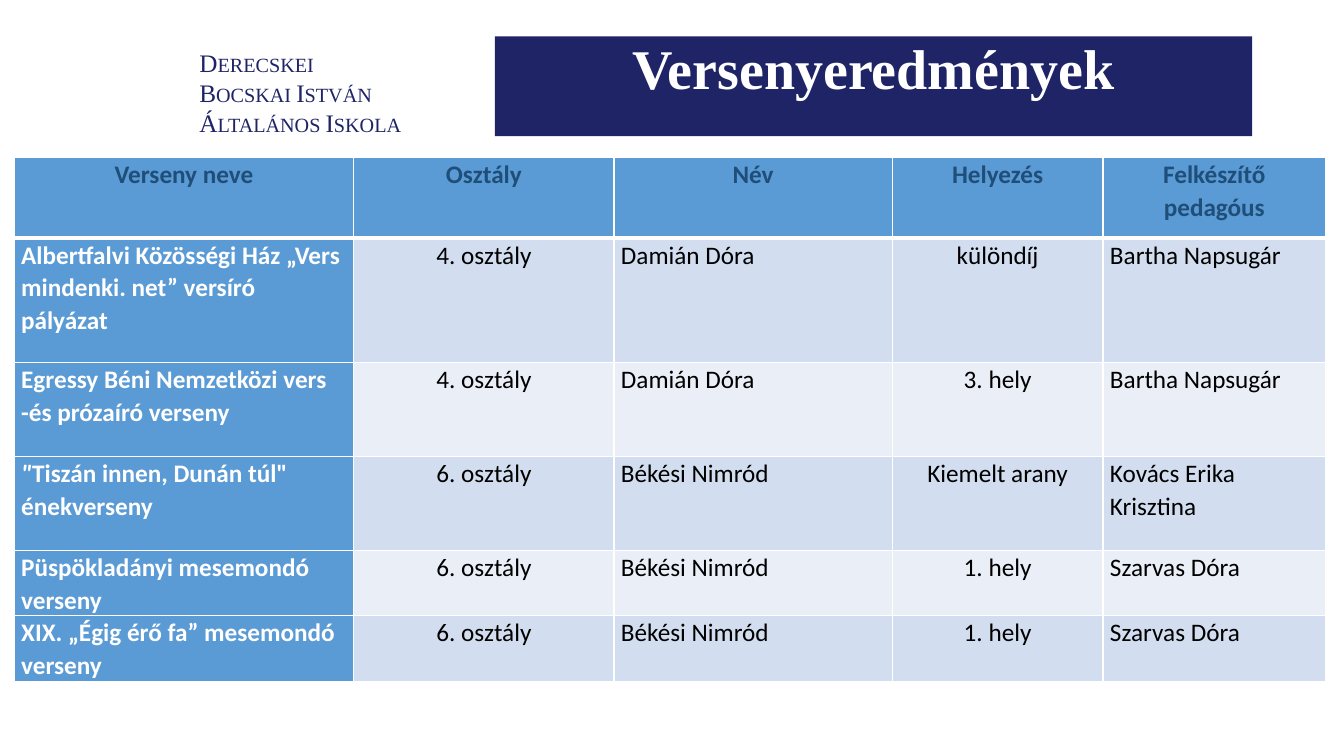
from dataclasses import dataclass

from lxml import etree
from pptx import Presentation, util as u
from pptx.dml.color import RGBColor
from pptx.enum import shapes, text
from pptx.oxml.ns import qn

SLIDE_WIDTH = u.Inches(13.33)
SLIDE_HEIGHT = u.Inches(7.5)


@dataclass(frozen=True)
class Theme:
    navy: str = "1F2466"
    white: str = "FFFFFF"
    black: str = "000000"
    header_ink: str = "1F4E79"
    accent: str = "5B9BD5"
    bands: tuple[str, str] = ("D2DEEF", "EAEFF7")
    heading_font: str = "Times New Roman"
    table_font: str = "Calibri"
    title_size: int = 40
    body_size: int = 18
    rule: int = 1
    header_rule: int = 3


@dataclass(frozen=True)
class Area:
    """Left, top, width and height as percentages of the slide."""
    left: float
    top: float
    width: float
    height: float

    def lengths(self) -> tuple[int, int, int, int]:
        return across(self.left), down(self.top), across(self.width), down(self.height)


@dataclass(frozen=True)
class Column:
    heading: str
    share: float
    centred: bool


@dataclass(frozen=True)
class Result:
    share: float
    contest: str
    grade: str
    pupil: str
    place: str
    teacher: str
    italic_lead: str = ""

    def values(self) -> tuple[str, ...]:
        return self.contest, self.grade, self.pupil, self.place, self.teacher


@dataclass(frozen=True)
class Ink:
    font: str
    size: int
    colour: str
    bold: bool = False


THEME = Theme()
SCHOOL_AREA = Area(14.1, 5.6, 50.04, 17.47)
TITLE_AREA = Area(36.83, 4.8, 56.34, 13.2)
TABLE_LEFT, TABLE_TOP = 1.05, 20.8
HEADER_SHARE = 10.67

SCHOOL_LINES = ("Derecskei", "Bocskai István", "Általános Iskola")
COLUMNS = (
    Column("Verseny neve", 25.28, False),
    Column("Osztály", 19.35, True),
    Column("Név", 20.71, False),
    Column("Helyezés", 15.68, True),
    Column("Felkészítő pedagóus", 16.58, False),
)
RESULTS = (
    Result(16.53, "Albertfalvi Közösségi Ház „Vers mindenki. net” versíró pályázat",
           "4. osztály", "Damián Dóra", "különdíj", "Bartha Napsugár"),
    Result(12.4, "Egressy Béni Nemzetközi vers -és prózaíró verseny",
           "4. osztály", "Damián Dóra", "3. hely", "Bartha Napsugár"),
    Result(12.4, 'Tiszán innen, Dunán túl" énekverseny',
           "6. osztály", "Békési Nimród", "Kiemelt arany", "Kovács Erika Krisztina", '"'),
    Result(8.67, "Püspökladányi mesemondó verseny",
           "6. osztály", "Békési Nimród", "1. hely", "Szarvas Dóra"),
    Result(8.67, "XIX. „Égig érő fa” mesemondó verseny",
           "6. osztály", "Békési Nimród", "1. hely", "Szarvas Dóra"),
)


def across(percent: float) -> int:
    return round(SLIDE_WIDTH * percent / 100)


def down(percent: float) -> int:
    return round(SLIDE_HEIGHT * percent / 100)


def add_run(paragraph, words: str, ink: Ink, italic: bool = False):
    run = paragraph.add_run()
    run.text = words
    run.font.name = ink.font
    run.font.size = u.Pt(ink.size)
    run.font.bold = ink.bold
    run.font.italic = italic
    run.font.color.rgb = RGBColor.from_string(ink.colour)
    return run


def draw_school(slide) -> None:
    school = slide.shapes.add_textbox(*SCHOOL_AREA.lengths())
    school.text_frame.word_wrap = True
    paragraph = school.text_frame.paragraphs[0]
    ink = Ink(THEME.heading_font, THEME.body_size, THEME.navy)
    for index, line in enumerate(SCHOOL_LINES):
        if index:
            paragraph.add_line_break()
        run = add_run(paragraph, line, ink)
        run.font._element.set("cap", "small")


def draw_title(slide) -> None:
    title = slide.shapes.add_shape(shapes.MSO_SHAPE.RECTANGLE, *TITLE_AREA.lengths())
    title.shadow.inherit = False
    title.fill.solid()
    title.fill.fore_color.rgb = RGBColor.from_string(THEME.navy)
    title.line.fill.background()
    title.text_frame.word_wrap = True
    title.text_frame.vertical_anchor = text.MSO_ANCHOR.TOP
    paragraph = title.text_frame.paragraphs[0]
    paragraph.alignment = text.PP_ALIGN.CENTER
    paragraph.line_spacing = 0.9
    paragraph.space_before = u.Pt(10)
    add_run(paragraph, "Versenyeredmények",
            Ink(THEME.heading_font, THEME.title_size, THEME.white, True))


def set_borders(cell, top: int, bottom: int) -> None:
    properties = cell._tc.get_or_add_tcPr()
    widths = {"a:lnL": THEME.rule, "a:lnR": THEME.rule, "a:lnT": top, "a:lnB": bottom}
    for index, (side, width) in enumerate(widths.items()):
        border = etree.Element(qn(side), w=str(u.Pt(width)))
        fill = etree.SubElement(border, qn("a:solidFill"))
        etree.SubElement(fill, qn("a:srgbClr"), val=THEME.white)
        properties.insert(index, border)


def fill_cell(cell, words: str, ink: Ink, background: str, centred: bool,
              top: int, bottom: int, italic_lead: str = "") -> None:
    cell.margin_left = cell.margin_right = u.Inches(0.07)
    cell.margin_top = cell.margin_bottom = 0
    cell.fill.solid()
    cell.fill.fore_color.rgb = RGBColor.from_string(background)
    set_borders(cell, top, bottom)
    paragraph = cell.text_frame.paragraphs[0]
    paragraph.alignment = text.PP_ALIGN.CENTER if centred else text.PP_ALIGN.LEFT
    paragraph.line_spacing = 1.07
    if italic_lead:
        add_run(paragraph, italic_lead, ink, italic=True)
    add_run(paragraph, words, ink)


def draw_results(slide) -> None:
    row_shares = [HEADER_SHARE, *(result.share for result in RESULTS)]
    area = Area(TABLE_LEFT, TABLE_TOP, sum(c.share for c in COLUMNS), sum(row_shares))
    table = slide.shapes.add_table(len(row_shares), len(COLUMNS), *area.lengths()).table
    for row, share in zip(table.rows, row_shares):
        row.height = down(share)

    header_ink = Ink(THEME.table_font, THEME.body_size, THEME.header_ink, True)
    contest_ink = Ink(THEME.table_font, THEME.body_size, THEME.white, True)
    value_ink = Ink(THEME.table_font, THEME.body_size, THEME.black)
    for c, column in enumerate(COLUMNS):
        table.columns[c].width = across(column.share)
        fill_cell(table.cell(0, c), column.heading, header_ink, THEME.accent, True,
                  THEME.rule, THEME.header_rule)
        for r, result in enumerate(RESULTS):
            is_contest = c == 0
            fill_cell(table.cell(r + 1, c), result.values()[c],
                      contest_ink if is_contest else value_ink,
                      THEME.accent if is_contest else THEME.bands[r % 2],
                      column.centred, THEME.rule if r else THEME.header_rule, THEME.rule,
                      result.italic_lead if is_contest else "")


def main() -> None:
    deck = Presentation()
    deck.slide_width, deck.slide_height = SLIDE_WIDTH, SLIDE_HEIGHT
    slide = deck.slides.add_slide(deck.slide_layouts[6])
    draw_school(slide)
    draw_title(slide)
    draw_results(slide)
    deck.save("out.pptx")


if __name__ == "__main__":
    main()
